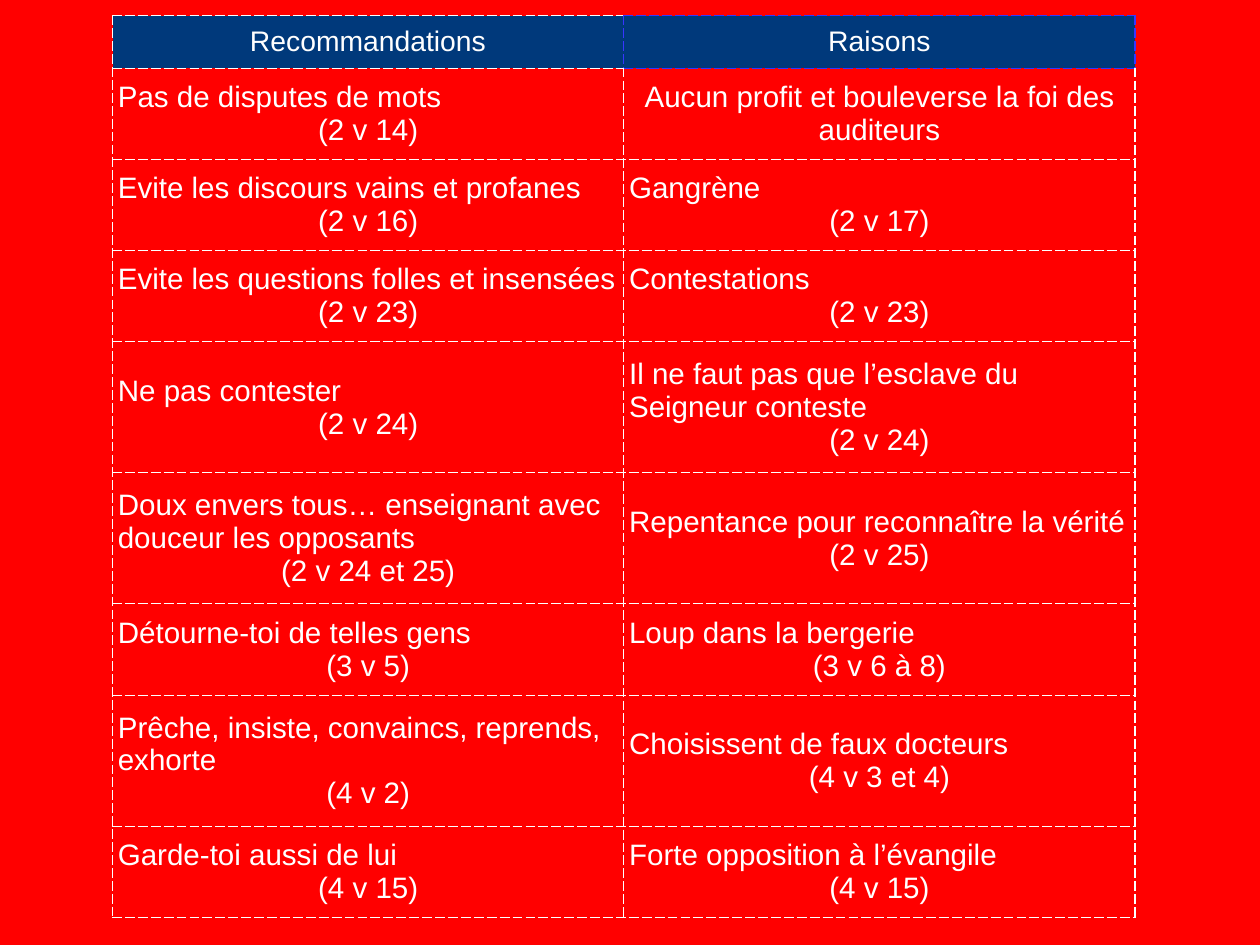
import pptx
import pptx.dml.color
import pptx.enum.text
import pptx.oxml
import pptx.oxml.ns
import pptx.util
from pptx.util import Inches

COLORS = {
    "background": "FF0000",
    "header": "00397B",
    "header_line": "3736FF",
    "text": "FFFFFF",
    "line": "FFFFFF",
    "outer_line": "FDFFFF",
}
HEADINGS = ("Recommandations", "Raisons")
# Each cell lists its statement, then its verse reference where there is one.
ADVICE = [
    (("Pas de disputes de mots", "(2 v 14)"),
     ("Aucun profit et bouleverse la foi des auditeurs",)),
    (("Evite les discours vains et profanes", "(2 v 16)"),
     ("Gangrène", "(2 v 17)")),
    (("Evite les questions folles et insensées", "(2 v 23)"),
     ("Contestations", "(2 v 23)")),
    (("Ne pas contester", "(2 v 24)"),
     ("Il ne faut pas que l’esclave du Seigneur conteste", "(2 v 24)")),
    (("Doux envers tous… enseignant avec douceur les opposants", "(2 v 24 et 25)"),
     ("Repentance pour reconnaître la vérité", "(2 v 25)")),
    (("Détourne-toi de telles gens", "(3 v 5)"),
     ("Loup dans la bergerie", "(3 v 6 à 8)")),
    (("Prêche, insiste, convaincs, reprends, exhorte", "(4 v 2)"),
     ("Choisissent de faux docteurs", "(4 v 3 et 4)")),
    (("Garde-toi aussi de lui", "(4 v 15)"),
     ("Forte opposition à l’évangile", "(4 v 15)")),
]
HEADER_HEIGHT, TWO_LINES, THREE_LINES = 0.59, 1.03, 1.48
ROW_HEIGHTS = [HEADER_HEIGHT] + [TWO_LINES] * 3 + [THREE_LINES] * 2 + [
    TWO_LINES, THREE_LINES, TWO_LINES]
COLUMN_WIDTH = 5.77


def rgb(name):
    return pptx.dml.color.RGBColor.from_string(COLORS[name])


class SlideBuilder:
    def __init__(self, prs, font="Arial", margin=0.06):
        self.font = font
        self.margin = Inches(margin)
        self.s = prs.slides.add_slide(prs.slide_layouts[6])

    def background(self, color):
        fill = self.s.background.fill
        fill.solid()
        fill.fore_color.rgb = rgb(color)

    def table(self, left, top, column_widths, row_heights):
        frame = self.s.shapes.add_table(
            len(row_heights), len(column_widths), Inches(left), Inches(top),
            Inches(sum(column_widths)), Inches(sum(row_heights)))
        table = frame.table
        table.first_row = table.horz_banding = False
        for column, width in zip(table.columns, column_widths):
            column.width = Inches(width)
        for row, height in zip(table.rows, row_heights):
            row.height = Inches(height)
        return table

    def cell(self, cell, lines, size, borders, fill=None):
        """Centre the last line and leave any line above it on the left."""
        cell.margin_left = cell.margin_right = self.margin
        cell.margin_top = cell.margin_bottom = self.margin
        cell.vertical_anchor = pptx.enum.text.MSO_ANCHOR.MIDDLE
        self.borders(cell, borders)
        if fill:
            cell.fill.solid()
            cell.fill.fore_color.rgb = rgb(fill)
        else:
            cell.fill.background()
        align = pptx.enum.text.PP_ALIGN
        tf = cell.text_frame
        for i, line in enumerate(lines):
            p = tf.add_paragraph() if i else tf.paragraphs[0]
            p.alignment = align.CENTER if line == lines[-1] else align.LEFT
            r = p.add_run()
            r.text = line
            r.font.name = self.font
            r.font.size = pptx.util.Pt(size)
            r.font.color.rgb = rgb("text")

    def borders(self, cell, colors):
        """Draw dashed borders in the order left, right, top, bottom."""
        tcPr = cell._tc.get_or_add_tcPr()
        for side, color in zip("LRTB", colors):
            tcPr.append(pptx.oxml.parse_xml(
                f'<a:ln{side} {pptx.oxml.ns.nsdecls("a")} w="{pptx.util.Pt(1)}">'
                f'<a:solidFill><a:srgbClr val="{COLORS[color]}"/></a:solidFill>'
                f'<a:prstDash val="dash"/></a:ln{side}>'))


def main():
    prs = pptx.Presentation()
    prs.slide_width, prs.slide_height = Inches(14.22), Inches(10.67)
    slide = SlideBuilder(prs)
    slide.background("background")
    table = slide.table(1.27, 0.18, [COLUMN_WIDTH] * 2, ROW_HEIGHTS)

    header_borders = (
        ("outer_line", "header_line", "outer_line", "line"),
        ("header_line",) * 4,
    )
    for col, heading in enumerate(HEADINGS):
        slide.cell(table.cell(0, col), (heading,), 23, header_borders[col], "header")

    for row, advice in enumerate(ADVICE, start=1):
        bottom = "outer_line" if row == len(ADVICE) else "line"
        for col, lines in enumerate(advice):
            left, right = ("line", "outer_line") if col else ("outer_line", "line")
            top = "header_line" if row == 1 and col else "line"
            slide.cell(table.cell(row, col), lines, 24, (left, right, top, bottom))

    prs.save("out.pptx")


if __name__ == "__main__":
    main()
